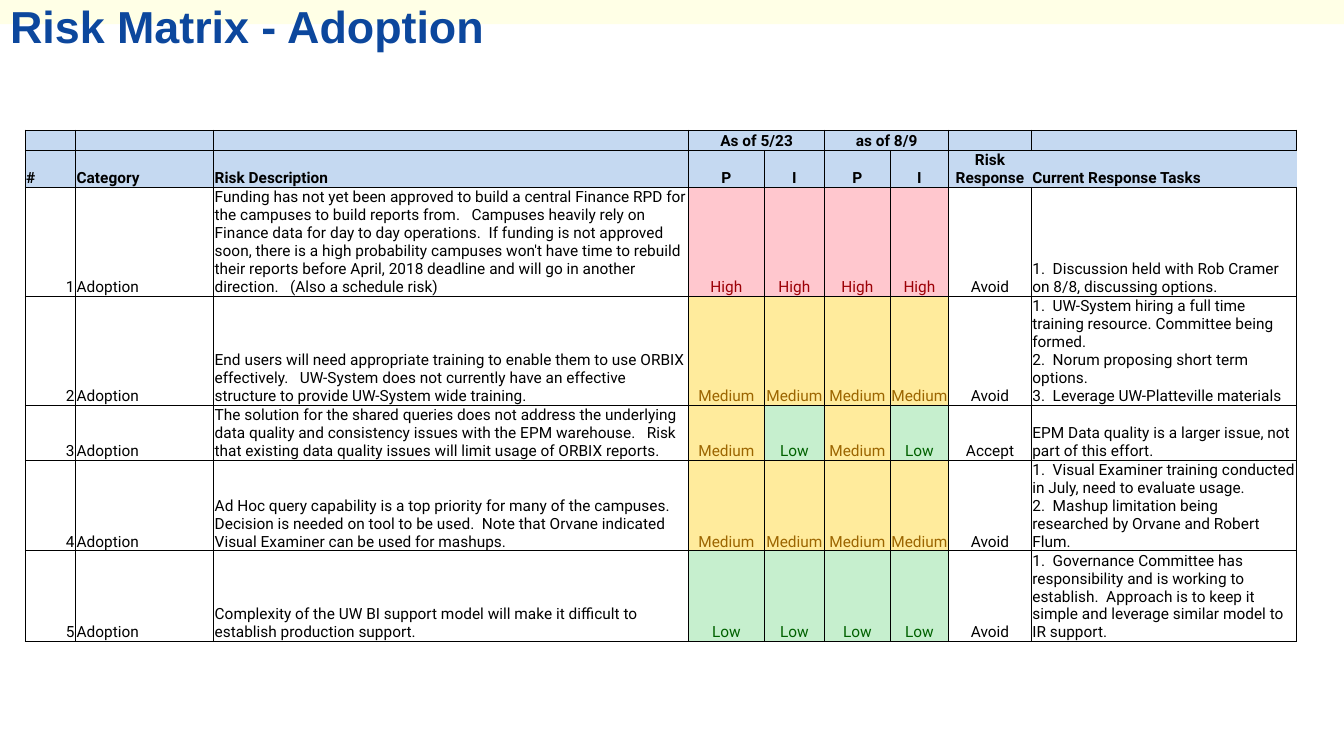
from dataclasses import dataclass

import lxml.etree
import pptx
import pptx.dml.color
import pptx.enum.shapes
import pptx.enum.text
import pptx.oxml.ns
import pptx.table
import pptx.util

Inches = pptx.util.Inches
Pt = pptx.util.Pt
RGBColor = pptx.dml.color.RGBColor
Align = pptx.enum.text.PP_ALIGN
Anchor = pptx.enum.text.MSO_ANCHOR
qn = pptx.oxml.ns.qn

BLACK = RGBColor(0x00, 0x00, 0x00)
TITLE_BLUE = RGBColor(0x0C, 0x47, 0x9D)
BAND_CREAM = RGBColor(0xFF, 0xFF, 0xE6)
HEADER_BLUE = RGBColor(0xC5, 0xD9, 0xF1)
BODY_FONT = "Roboto"
BODY_SIZE = Pt(11)
ALL_SIDES = "LRTB"


@dataclass(frozen=True)
class Rating:
    label: str
    ink: RGBColor
    fill: RGBColor


@dataclass(frozen=True)
class Column:
    heading: str
    width: float
    heading_align: Align
    align: Align
    heading_borders: str = ALL_SIDES


@dataclass(frozen=True)
class Risk:
    height: float
    description: str
    ratings: tuple[Rating, ...]
    response: str
    tasks: str


HIGH = Rating("High", RGBColor(0x9C, 0x00, 0x06), RGBColor(0xFF, 0xC7, 0xCE))
MEDIUM = Rating("Medium", RGBColor(0x9C, 0x65, 0x00), RGBColor(0xFF, 0xEB, 0x9C))
LOW = Rating("Low", RGBColor(0x00, 0x61, 0x00), RGBColor(0xC6, 0xEF, 0xCE))

COLUMNS = [
    Column("#", 0.5, Align.LEFT, Align.RIGHT),
    Column("Category", 1.37, Align.LEFT, Align.LEFT),
    Column("Risk Description", 4.71, Align.LEFT, Align.LEFT),
    Column("P", 0.75, Align.CENTER, Align.CENTER),
    Column("I", 0.6, Align.CENTER, Align.CENTER),
    Column("P", 0.65, Align.CENTER, Align.CENTER),
    Column("I", 0.58, Align.CENTER, Align.CENTER),
    Column("Risk Response", 0.82, Align.CENTER, Align.CENTER, "LTB"),
    Column("Current Response Tasks", 2.63, Align.LEFT, Align.LEFT, "TB"),
]
REVIEWS = {3: "As of 5/23", 5: "as of 8/9"}
HEADER_HEIGHTS = [0.16, 0.35]

RISKS = [
    Risk(
        0.79,
        "Funding has not yet been approved to build a central Finance RPD for the campuses "
        "to build reports from.   Campuses heavily rely on Finance data for day to day "
        "operations.  If funding is not approved soon, there is a high probability campuses "
        "won't have time to rebuild their reports before April, 2018 deadline and will go in "
        "another direction.   (Also a schedule risk)",
        (HIGH,) * 4,
        "Avoid",
        "1.  Discussion held with Rob Cramer on 8/8, discussing options.",
    ),
    Risk(
        0.63,
        "End users will need appropriate training to enable them to use ORBIX effectively.   "
        "UW-System does not currently have an effective structure to provide UW-System wide "
        "training.",
        (MEDIUM,) * 4,
        "Avoid",
        "1.  UW-System hiring a full time training resource. Committee being formed.\v"
        "2.  Norum proposing short term options.\v"
        "3.  Leverage UW-Platteville materials",
    ),
    Risk(
        0.48,
        "The solution for the shared queries does not address the underlying data quality and "
        "consistency issues with the EPM warehouse.   Risk that existing data quality issues "
        "will limit usage of ORBIX reports.",
        (MEDIUM, LOW) * 2,
        "Accept",
        "EPM Data quality is a larger issue, not part of this effort.",
    ),
    Risk(
        0.63,
        "Ad Hoc query capability is a top priority for many of the campuses.   Decision is "
        "needed on tool to be used.  Note that Orvane indicated Visual Examiner can be used "
        "for mashups.",
        (MEDIUM,) * 4,
        "Avoid",
        "1.  Visual Examiner training conducted in July, need to evaluate usage.\v"
        "2.  Mashup limitation being researched by Orvane and Robert Flum.",
    ),
    Risk(
        0.48,
        "Complexity of the UW BI support model will make it difficult to establish production "
        "support.",
        (LOW,) * 4,
        "Avoid",
        "1.  Governance Committee has responsibility and is working to establish.  Approach is "
        "to keep it simple and leverage similar model to IR support.",
    ),
]


def set_borders(cell: pptx.table._Cell, sides: str) -> None:
    properties = cell._tc.get_or_add_tcPr()
    for side in ALL_SIDES:
        line = lxml.etree.SubElement(properties, qn(f"a:ln{side}"), w=str(Pt(0.5)))
        if side in sides:
            paint = lxml.etree.SubElement(line, qn("a:solidFill"))
            lxml.etree.SubElement(paint, qn("a:srgbClr"), val=str(BLACK))
        else:
            lxml.etree.SubElement(line, qn("a:noFill"))


def write_cell(
    cell: pptx.table._Cell,
    text: str,
    align: Align,
    fill: RGBColor | None = None,
    ink: RGBColor = BLACK,
    bold: bool = False,
    borders: str = ALL_SIDES,
) -> None:
    set_borders(cell, borders)
    if fill is None:
        cell.fill.background()
    else:
        cell.fill.solid()
        cell.fill.fore_color.rgb = fill
    cell.margin_left = cell.margin_right = cell.margin_top = Inches(0.01)
    cell.margin_bottom = 0
    cell.vertical_anchor = Anchor.BOTTOM
    cell.text_frame.text = text
    paragraph = cell.text_frame.paragraphs[0]
    paragraph.alignment = align
    for run in paragraph.runs:
        run.font.name = BODY_FONT
        run.font.size = BODY_SIZE
        run.font.bold = bold
        run.font.color.rgb = ink
    if not text:
        size = str(int(BODY_SIZE.pt * 100))
        lxml.etree.SubElement(paragraph._p, qn("a:endParaRPr"), sz=size)


def add_heading(slide: pptx.slide.Slide) -> None:
    heading = slide.shapes.title
    heading.left, heading.top = 0, 0
    heading.width, heading.height = Inches(11.87), Inches(0.57)
    frame = heading.text_frame
    frame.text = "Risk Matrix - Adoption"
    frame.auto_size = pptx.enum.text.MSO_AUTO_SIZE.NONE
    frame.vertical_anchor = Anchor.BOTTOM
    paragraph = frame.paragraphs[0]
    paragraph.alignment = Align.LEFT
    paragraph.line_spacing = 0.85
    font = paragraph.runs[0].font
    font.name, font.size, font.bold = "Arial", Pt(32), True
    font.color.rgb = TITLE_BLUE

    band = slide.shapes.add_shape(
        pptx.enum.shapes.MSO_SHAPE.RECTANGLE, 0, 0, Inches(13.33), Inches(0.24)
    )
    band.shadow.inherit = False
    band.fill.solid()
    band.fill.fore_color.rgb = BAND_CREAM
    band.line.fill.background()
    heading.element.addprevious(band.element)


def add_matrix(slide: pptx.slide.Slide) -> None:
    heights = HEADER_HEIGHTS + [risk.height for risk in RISKS]
    matrix = slide.shapes.add_table(
        len(heights), len(COLUMNS), Inches(0.25), Inches(1.29), Inches(12.6), Inches(sum(heights))
    ).table
    matrix.first_row = matrix.horz_banding = False
    for row, height in zip(matrix.rows, heights):
        row.height = Inches(height)

    for index, column in enumerate(COLUMNS):
        matrix.columns[index].width = Inches(column.width)
        write_cell(matrix.cell(0, index), REVIEWS.get(index, ""), Align.CENTER, HEADER_BLUE, bold=True)
        write_cell(matrix.cell(1, index), column.heading, column.heading_align, HEADER_BLUE,
                   bold=True, borders=column.heading_borders)
    for first in REVIEWS:
        matrix.cell(0, first).merge(matrix.cell(0, first + 1))

    for number, risk in enumerate(RISKS, 1):
        entries = [str(number), "Adoption", risk.description, *risk.ratings, risk.response, risk.tasks]
        for index, (entry, column) in enumerate(zip(entries, COLUMNS)):
            cell = matrix.cell(number + 1, index)
            if isinstance(entry, Rating):
                write_cell(cell, entry.label, column.align, entry.fill, entry.ink)
            else:
                write_cell(cell, entry, column.align)


def main() -> None:
    deck = pptx.Presentation()
    deck.slide_width, deck.slide_height = Inches(13.33), Inches(7.5)
    slide = deck.slides.add_slide(deck.slide_layouts.get_by_name("Title Only"))
    add_heading(slide)
    add_matrix(slide)
    deck.save("out.pptx")


if __name__ == "__main__":
    main()
